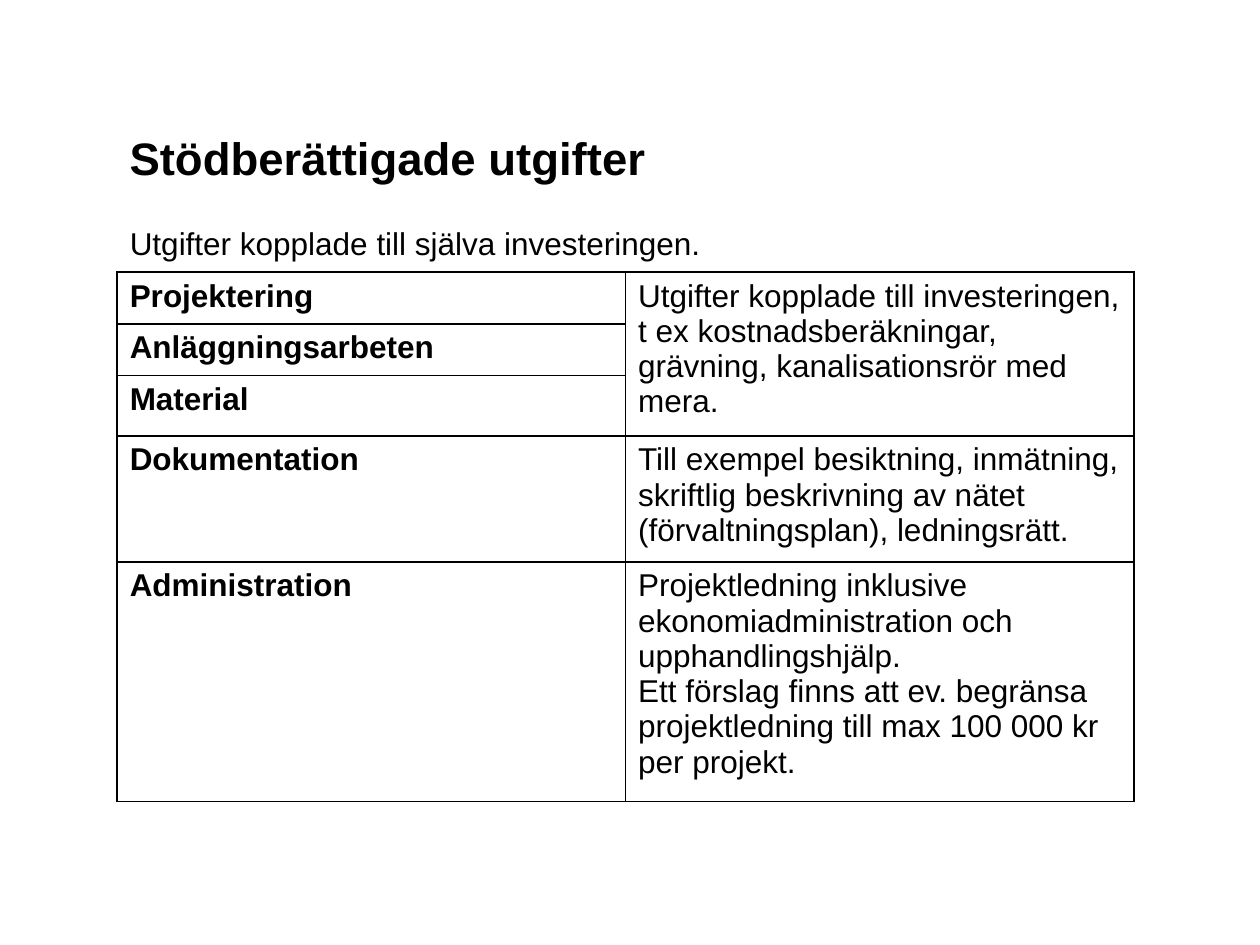
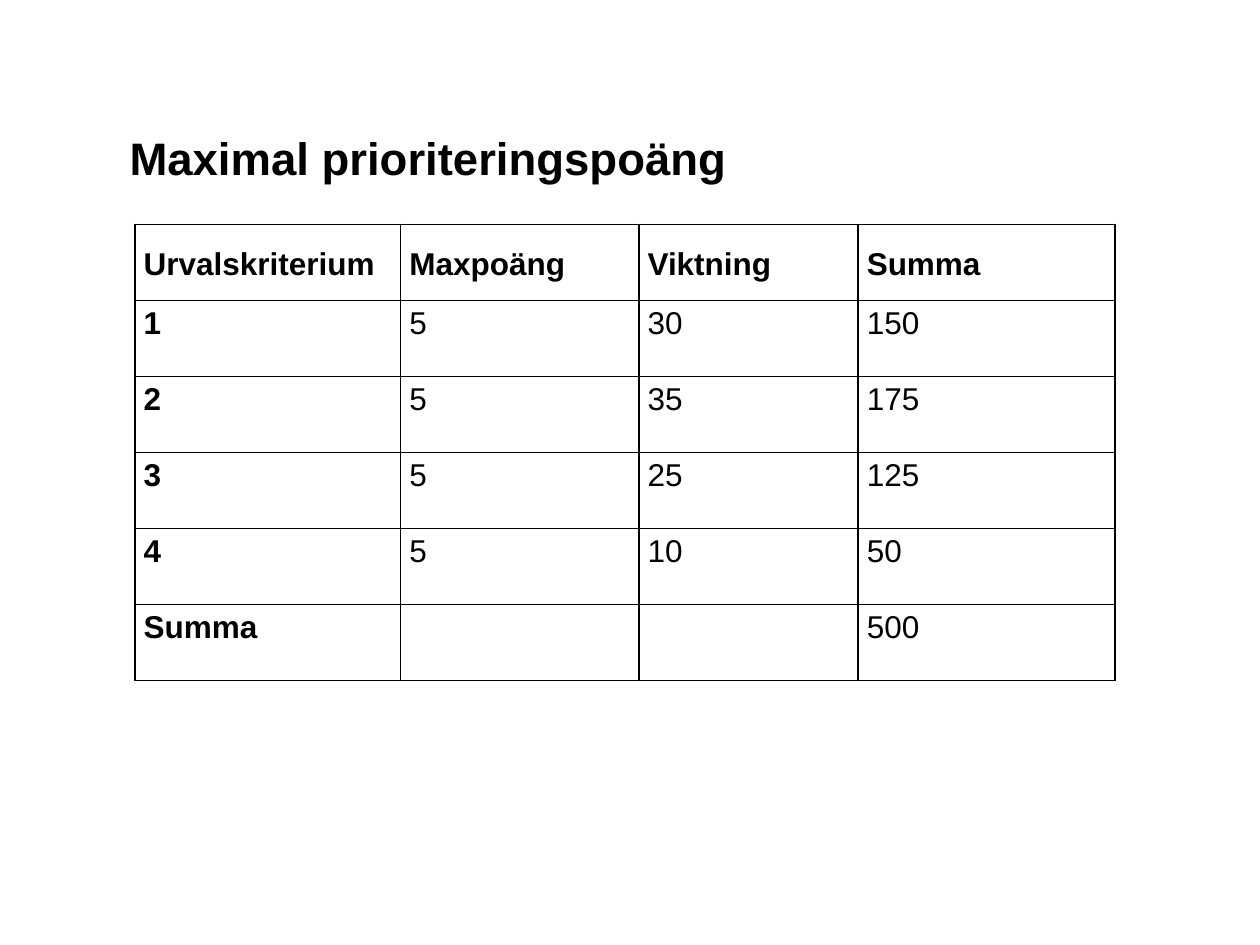
import pptx
import pptx.dml.color
import pptx.enum.text
import pptx.util
from lxml import etree
from pptx.oxml.ns import qn

Inches = pptx.util.Inches
Pt = pptx.util.Pt
Anchor = pptx.enum.text.MSO_ANCHOR

COLORS = {"text": "000000", "rule": "000000"}
FONT = "Arial"


def write(frame, text, size=18, bold=False, color="text", space=None):
    """Fill a text frame; a vertical tab in the text is a line break."""
    frame.word_wrap = True
    para = frame.paragraphs[0]
    para.text = text
    if space:
        para.line_spacing = space
    for font in [para.font] + [run.font for run in para.runs]:
        font.name = FONT
        font.size = Pt(size)
        font.bold = bold
        font.color.rgb = pptx.dml.color.RGBColor.from_string(COLORS[color])


def border(cell, sides="LRTB", width=1):
    """Draw the named sides of a cell and hide the others."""
    props = cell._tc.get_or_add_tcPr()
    for side in "LRTB":
        line = etree.SubElement(props, qn("a:ln" + side), w=str(Pt(width)))
        if side in sides:
            fill = etree.SubElement(line, qn("a:solidFill"))
            etree.SubElement(fill, qn("a:srgbClr"), val=COLORS["rule"])
        else:
            etree.SubElement(line, qn("a:noFill"))


class Deck:
    def __init__(self):
        self.show = pptx.Presentation()
        self.show.slide_width = Inches(10)
        self.show.slide_height = Inches(7.5)
        self.slide = None

    def page(self, title):
        self.slide = self.show.slides.add_slide(self.show.slide_layouts[6])
        box = self.slide.shapes.add_textbox(
            Inches(0.93), Inches(0.81), Inches(8.07), Inches(0.88))
        box.text_frame.vertical_anchor = Anchor.MIDDLE
        write(box.text_frame, title, size=26, bold=True)

    def table(self, left, top, widths, height, rows, head=False,
              inset=None, space=None, merges=(), open_top=False):
        """Add a ruled table whose first column is bold."""
        grid = self.slide.shapes.add_table(
            len(rows), len(widths), Inches(left), Inches(top),
            Inches(sum(widths)), Inches(height * len(rows))).table
        grid.first_row = grid.horz_banding = False
        for col, width in zip(grid.columns, widths):
            col.width = Inches(width)
        for first, last in merges:
            grid.cell(*first).merge(grid.cell(*last))
        for r, row in enumerate(rows):
            for c, text in enumerate(row):
                cell = grid.cell(r, c)
                border(cell, "B" if open_top and r == 0 else "LRTB")
                cell.fill.background()
                if inset is not None:
                    cell.margin_left = cell.margin_right = Inches(inset)
                    cell.margin_top = cell.margin_bottom = 0
                if head and r == 0:
                    cell.vertical_anchor = Anchor.MIDDLE
                label = c == 0 and not (open_top and r == 0)
                write(cell.text_frame, text, space=space,
                      bold=label or (head and r == 0))


def main():
    deck = Deck()

    # Eligible costs
    deck.page("Stödberättigade utgifter")
    costs = [
        ("Utgifter kopplade till själva investeringen.", ""),
        ("Projektering",
         "Utgifter kopplade till investeringen, t ex kostnadsberäkningar, "
         "grävning, kanalisationsrör med mera."),
        ("Anläggningsarbeten", ""),
        ("Material", ""),
        ("Dokumentation",
         "Till exempel besiktning, inmätning, skriftlig beskrivning av nätet "
         "(förvaltningsplan), ledningsrätt."),
        ("Administration",
         "Projektledning inklusive ekonomiadministration och "
         "upphandlingshjälp.\vEtt förslag finns att ev. begränsa "
         "projektledning till max 100 000 kr per projekt."),
    ]
    deck.table(0.93, 1.75, [8.07 / 2] * 2, 0.41, costs, open_top=True,
               merges=[((0, 0), (0, 1)), ((1, 1), (3, 1))])

    # Highest scores: points times weight
    deck.page("Maximal prioriteringspoäng")
    points = 5
    weights = [30, 35, 25, 10]
    scores = [("Urvalskriterium", "Maxpoäng", "Viktning", "Summa")]
    for number, weight in enumerate(weights, 1):
        scores.append((str(number), str(points), str(weight),
                       str(points * weight)))
    scores.append(("Summa", "", "", str(points * sum(weights))))
    deck.table(1.07, 1.78, [2.11, 1.89, 1.74, 2.04], 3.62 / 6, scores,
               head=True, inset=0.07, space=1.15)

    deck.show.save("out.pptx")


if __name__ == "__main__":
    main()
